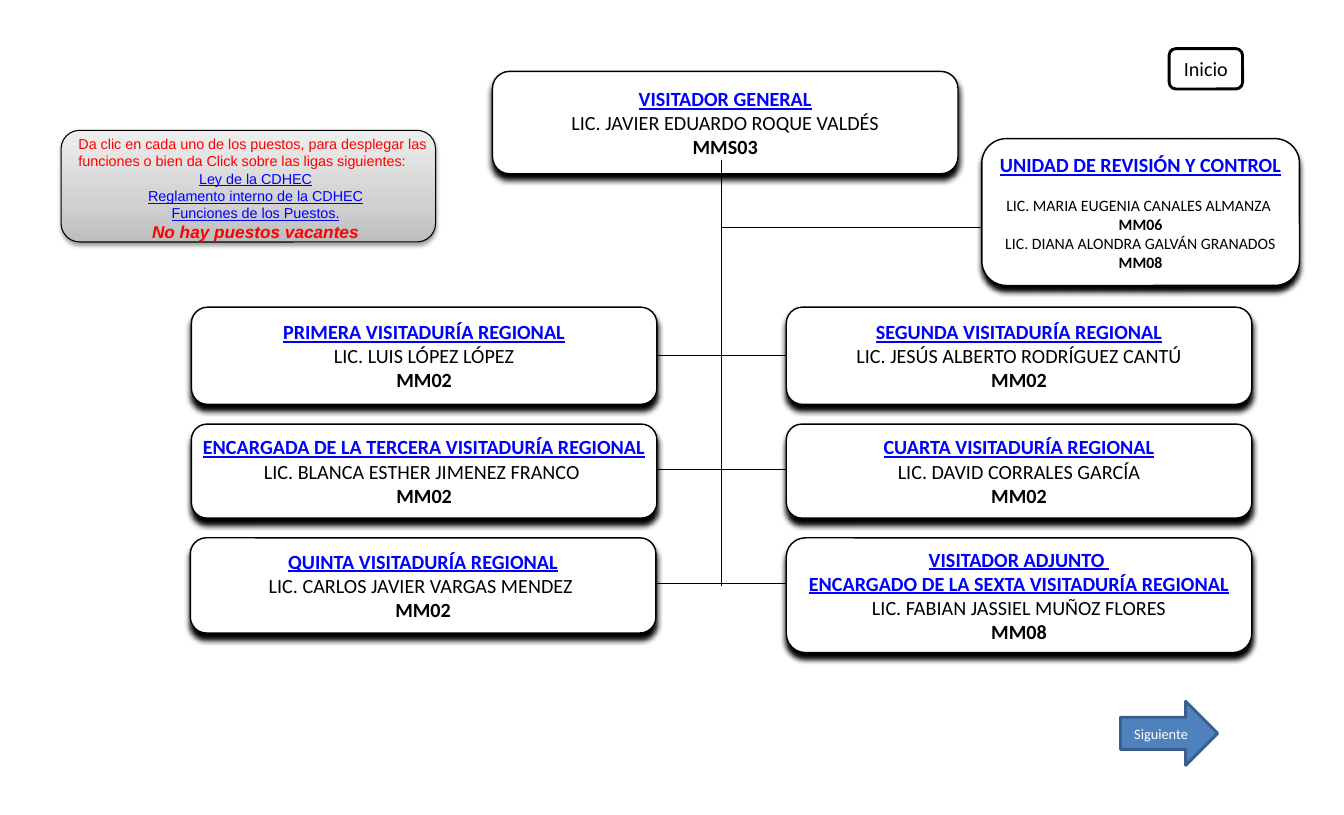
import pptx
import pptx.util
import pptx.oxml
import pptx.oxml.ns
import pptx.dml.color
import pptx.enum.shapes
import pptx.enum.text

RGB = pptx.dml.color.RGBColor
SHAPE = pptx.enum.shapes.MSO_SHAPE
ALIGN = pptx.enum.text.PP_ALIGN
ANCHOR = pptx.enum.text.MSO_ANCHOR
GROW = pptx.enum.text.MSO_AUTO_SIZE.SHAPE_TO_FIT_TEXT
NAMESPACE = pptx.oxml.ns.nsdecls("a")

BLACK = RGB(0, 0, 0)
WHITE = RGB(255, 255, 255)
RED = RGB(255, 0, 0)
LINK = RGB(0, 0, 255)
ARROW_FILL = RGB(0x4F, 0x81, 0xBD)
ARROW_LINE = RGB(0x3A, 0x5F, 0x8C)
NOTE_STOPS = ((0, "BDBDBD"), (35, "D1D1D1"), (100, "EEEEEE"))

EMU_PER_PX = 9144
TRUNK_X = 697

CARD_FRAME = {"word_wrap": False, "vertical_anchor": ANCHOR.MIDDLE,
              "margin_left": 17 * EMU_PER_PX, "margin_right": 17 * EMU_PER_PX,
              "margin_top": 9 * EMU_PER_PX, "margin_bottom": 9 * EMU_PER_PX}
BUTTON_FRAME = {"word_wrap": True, "vertical_anchor": ANCHOR.MIDDLE}
NOTE_FRAME = {"word_wrap": True, "auto_size": GROW}

TITLE = {"name": "Calibri", "size": pptx.util.Pt(14), "bold": True,
         "underline": True, "color": LINK}
PERSON = {"name": "Calibri", "size": pptx.util.Pt(14), "color": BLACK}
NOTE = {"name": "Arial", "size": pptx.util.Pt(10), "color": RED}
NOTE_LINK = {**NOTE, "underline": True, "color": LINK}
VACANCY = {**NOTE, "size": pptx.util.Pt(12), "bold": True, "italic": True}

REGIONAL_ROWS = (
    (344,
     ((185, 297, 450, 94), ["PRIMERA VISITADURÍA REGIONAL"],
      [("LIC. LUIS LÓPEZ LÓPEZ", "MM02")]),
     ((760, 297, 450, 94), ["SEGUNDA VISITADURÍA REGIONAL"],
      [("LIC. JESÚS ALBERTO RODRÍGUEZ CANTÚ", "MM02")])),
    (454,
     ((185, 410, 450, 91), ["ENCARGADA DE LA TERCERA VISITADURÍA REGIONAL"],
      [("LIC. BLANCA ESTHER JIMENEZ FRANCO ", "MM02")]),
     ((760, 410, 450, 91), ["CUARTA VISITADURÍA REGIONAL"],
      [("LIC. DAVID CORRALES GARCÍA", "MM02")])),
    (564,
     ((184, 520, 450, 92), ["QUINTA VISITADURÍA REGIONAL"],
      [("LIC. CARLOS JAVIER VARGAS MENDEZ ", "MM02")]),
     ((760, 520, 450, 111),
      ["VISITADOR ADJUNTO ", "ENCARGADO DE LA SEXTA VISITADURÍA REGIONAL"],
      [("LIC. FABIAN JASSIEL MUÑOZ FLORES", "MM08")])),
)


def px(*lengths):
    return [length * EMU_PER_PX for length in lengths]


def apply(target, formats):
    for name, value in formats.items():
        if name == "color":
            target.color.rgb = value
        else:
            setattr(target, name, value)


def write(frame, frame_format, lines):
    apply(frame, frame_format)
    for index, (text, font, para_format) in enumerate(lines):
        para = frame.add_paragraph() if index else frame.paragraphs[0]
        apply(para, para_format)
        span = para.add_run()
        span.text = text
        apply(span.font, font)


def add_box(page, kind, box, fill, outline, width):
    shape = page.shapes.add_shape(kind, *px(*box))
    shape.shadow.inherit = False
    shape.fill.solid()
    shape.fill.fore_color.rgb = fill
    shape.line.color.rgb = outline
    shape.line.width = pptx.util.Pt(width)
    return shape


def add_shadow(shape, opacity, blur, distance):
    effects = shape._element.spPr.find(pptx.oxml.ns.qn("a:effectLst"))
    effects.append(pptx.oxml.parse_xml(
        f'<a:outerShdw {NAMESPACE} blurRad="{pptx.util.Pt(blur)}" '
        f'dist="{pptx.util.Pt(distance)}" dir="5400000" rotWithShape="0">'
        f'<a:srgbClr val="000000"><a:alpha val="{opacity * 1000}"/></a:srgbClr>'
        '</a:outerShdw>'))


def add_line(page, start, end):
    line = page.shapes.add_connector(
        pptx.enum.shapes.MSO_CONNECTOR.STRAIGHT, *px(*start, *end))
    line.line.color.rgb = BLACK
    line.line.width = pptx.util.Pt(0.75)
    line._element.spPr.append(pptx.oxml.parse_xml(f"<a:effectLst {NAMESPACE}/>"))


def add_card(page, box, titles, staff, size=14, gap=0):
    card = add_box(page, SHAPE.ROUNDED_RECTANGLE, box, WHITE, BLACK, 1)
    add_shadow(card, 100, 4, 4)
    centred = {"alignment": ALIGN.CENTER}
    person = {**PERSON, "size": pptx.util.Pt(size)}
    lines = [(title, TITLE, {**centred, "space_after": pptx.util.Pt(gap)})
             for title in titles]
    for name, grade in staff:
        lines += [(name, person, centred), (grade, {**person, "bold": True}, centred)]
    write(card.text_frame, CARD_FRAME, lines)


def add_button(page, kind, box, text, size, fill, outline, color):
    button = add_box(page, kind, box, fill, outline, 2)
    font = {"name": "Calibri", "size": pptx.util.Pt(size), "color": color}
    write(button.text_frame, BUTTON_FRAME, [(text, font, {"alignment": ALIGN.CENTER})])


def add_note(page, box):
    left, top, width, height = box
    panel = add_box(page, SHAPE.ROUNDED_RECTANGLE, box, WHITE, BLACK, 0.75)
    add_shadow(panel, 38, 3.1, 1.6)
    stops = "".join(f'<a:gs pos="{place * 1000}"><a:srgbClr val="{color}"/></a:gs>'
                    for place, color in NOTE_STOPS)
    properties = panel._element.spPr
    solid = properties.find(pptx.oxml.ns.qn("a:solidFill"))
    properties.replace(solid, pptx.oxml.parse_xml(
        f'<a:gradFill {NAMESPACE} rotWithShape="1"><a:gsLst>{stops}</a:gsLst>'
        '<a:lin ang="16200000" scaled="0"/></a:gradFill>'))
    label = page.shapes.add_textbox(*px(left + 7, top, width, height + 6))
    centred = {"alignment": ALIGN.CENTER}
    write(label.text_frame, NOTE_FRAME, [
        ("Da clic en cada uno de los puestos, para desplegar las funciones "
         "o bien da Click sobre las ligas siguientes:", NOTE, {}),
        ("Ley de la CDHEC", NOTE_LINK, centred),
        ("Reglamento interno de la CDHEC", NOTE_LINK, centred),
        ("Funciones de los Puestos.", NOTE_LINK, centred),
        ("No hay puestos vacantes", VACANCY, centred),
    ])


def add_regional_cards(page):
    for line_y, left_card, right_card in REGIONAL_ROWS:
        add_line(page, (586, line_y), (815, line_y))
        add_card(page, *left_card)
        add_card(page, *right_card)


def add_control_unit(page, box):
    left, top, width, height = box
    line_y = top + 86
    add_line(page, (TRUNK_X, line_y), (left + 16, line_y))
    add_card(page, box, ["UNIDAD DE REVISIÓN Y CONTROL"],
             [("LIC. MARIA EUGENIA CANALES ALMANZA ", "MM06"),
              ("LIC. DIANA ALONDRA GALVÁN GRANADOS", "MM08")], size=11, gap=13.4)


def main():
    deck = pptx.Presentation()
    deck.slide_width, deck.slide_height = px(1299, 788)
    page = deck.slides.add_slide(deck.slide_layouts[6])
    add_card(page, (476, 69, 450, 99), ["VISITADOR GENERAL"],
             [("LIC. JAVIER EDUARDO ROQUE VALDÉS", "MMS03")])
    add_line(page, (TRUNK_X, 155), (TRUNK_X, 567))
    add_regional_cards(page)
    add_control_unit(page, (949, 134, 307, 142))
    add_button(page, SHAPE.ROUNDED_RECTANGLE, (1130, 47, 71, 39),
               "Inicio", 14, WHITE, BLACK, BLACK)
    add_note(page, (59, 126, 362, 108))
    add_button(page, SHAPE.RIGHT_ARROW, (1083, 678, 94, 62),
               "Siguiente", 10, ARROW_FILL, ARROW_LINE, WHITE)
    deck.save("out.pptx")


if __name__ == "__main__":
    main()
